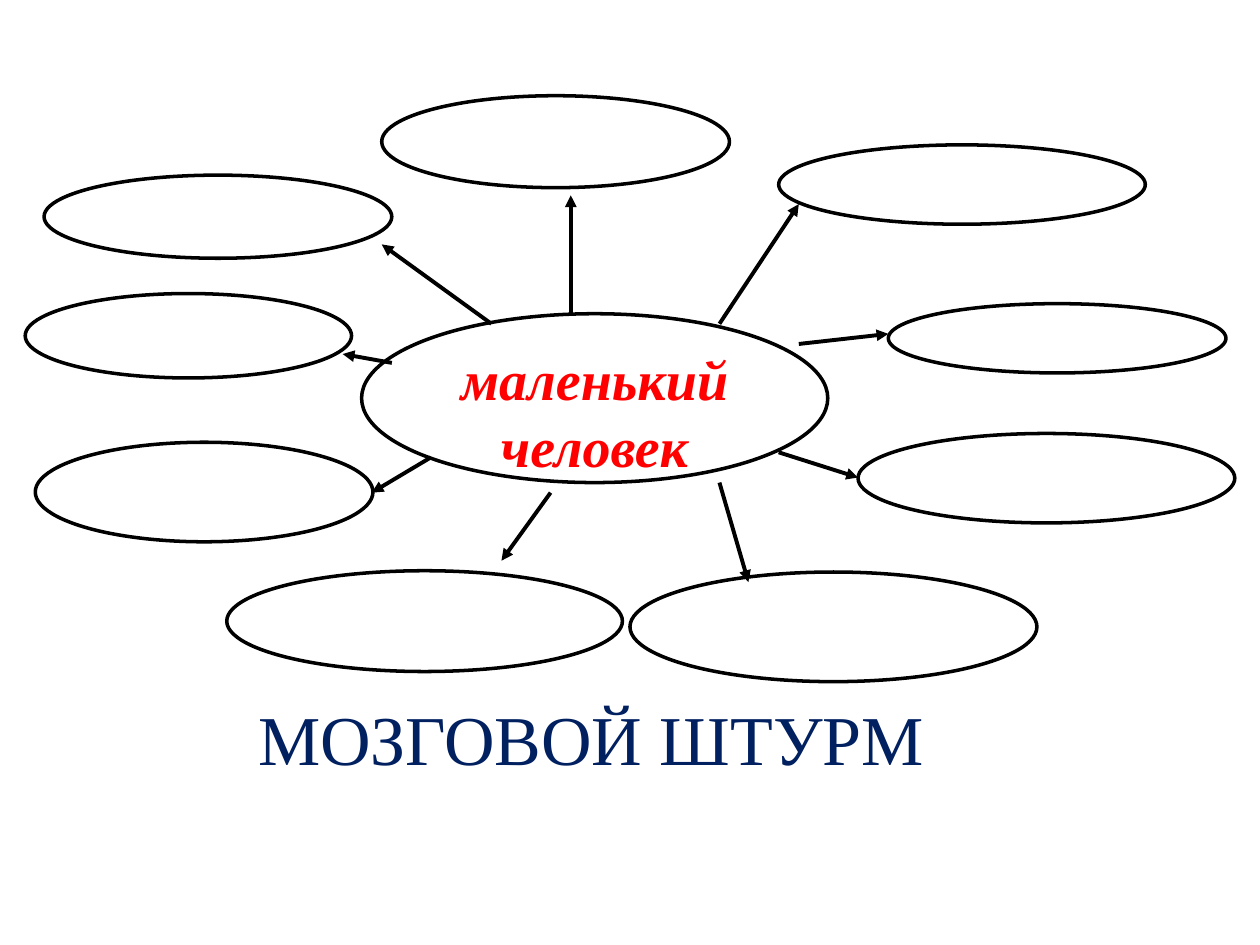
from dataclasses import dataclass

from lxml.etree import SubElement
from pptx import Presentation
from pptx.dml.color import RGBColor
from pptx.enum.shapes import MSO_CONNECTOR as Link, MSO_SHAPE as Shape
from pptx.enum.text import MSO_ANCHOR as Anchor, MSO_AUTO_SIZE as AutoSize, PP_ALIGN as Align
from pptx.oxml.ns import qn
from pptx.util import Inches, Pt


@dataclass(frozen=True)
class Theme:
    font: str = "Times New Roman"
    paper: RGBColor = RGBColor(0xFF, 0xFF, 0xFF)
    ink: RGBColor = RGBColor(0, 0, 0)
    topic: RGBColor = RGBColor(0xFF, 0, 0)
    heading: RGBColor = RGBColor(0, 0x20, 0x60)
    topic_size: Pt = Pt(32)
    heading_size: Pt = Pt(40)
    outline: Pt = Pt(2)
    arrow: Pt = Pt(2.25)


@dataclass(frozen=True)
class Bubble:
    left: float
    top: float
    width: float
    height: float


@dataclass(frozen=True)
class Arrow:
    start: tuple[float, float]
    end: tuple[float, float]


THEME = Theme()
TOPIC = Bubble(2.87, 2.49, 3.7, 1.34)
IDEAS = [
    Bubble(0.35, 1.39, 2.76, 0.66),
    Bubble(0.2, 2.33, 2.59, 0.67),
    Bubble(0.28, 3.51, 2.68, 0.79),
    Bubble(3.03, 0.76, 2.76, 0.73),
    Bubble(1.8, 4.53, 3.14, 0.8),
    Bubble(6.18, 1.15, 2.91, 0.63),
    Bubble(7.05, 2.41, 2.68, 0.55),
    Bubble(6.81, 3.44, 2.99, 0.71),
    Bubble(5, 4.54, 3.23, 0.87),
]
ARROWS = [
    Arrow((4.53, 2.49), (4.53, 1.55)),
    Arrow((6.34, 2.73), (7.05, 2.65)),
    Arrow((5.71, 2.57), (6.34, 1.62)),
    Arrow((6.18, 3.59), (6.81, 3.79)),
    Arrow((5.71, 3.83), (5.94, 4.62)),
    Arrow((4.37, 3.91), (3.98, 4.45)),
    Arrow((3.9, 2.57), (3.03, 1.94)),
    Arrow((3.42, 3.63), (2.95, 3.91)),
    Arrow((3.11, 2.88), (2.72, 2.81)),
]
TOPIC_FORMAT = {"name": THEME.font, "size": THEME.topic_size, "bold": True, "italic": True}
HEADING_FORMAT = {"name": THEME.font, "size": THEME.heading_size}


def draw_bubble(shapes, bubble: Bubble):
    ellipse = shapes.add_shape(
        Shape.OVAL, Inches(bubble.left), Inches(bubble.top),
        Inches(bubble.width), Inches(bubble.height),
    )
    ellipse.shadow.inherit = False
    ellipse.fill.solid()
    ellipse.fill.fore_color.rgb = THEME.paper
    ellipse.line.color.rgb = THEME.ink
    ellipse.line.width = THEME.outline
    return ellipse


def draw_arrow(shapes, arrow: Arrow) -> None:
    ends = [Inches(value) for value in (*arrow.start, *arrow.end)]
    connector = shapes.add_connector(Link.STRAIGHT, *ends)
    connector.line.color.rgb = THEME.ink
    connector.line.width = THEME.arrow
    SubElement(connector.line._get_or_add_ln(), qn("a:tailEnd"), type="triangle")
    SubElement(connector._element.spPr, qn("a:effectLst"))


def write(frame, text: str, font_format: dict, color: RGBColor, align: Align) -> None:
    paragraph = frame.paragraphs[0]
    paragraph.alignment = align
    run = paragraph.add_run()
    run.text = text
    for attribute, value in font_format.items():
        setattr(run.font, attribute, value)
    run.font.color.rgb = color


def main() -> None:
    deck = Presentation()
    deck.slide_width, deck.slide_height = Inches(10), Inches(7.5)
    shapes = deck.slides.add_slide(deck.slide_layouts[6]).shapes

    topic = draw_bubble(shapes, TOPIC).text_frame
    topic.vertical_anchor = Anchor.TOP
    write(topic, "маленький человек", TOPIC_FORMAT, THEME.topic, Align.CENTER)

    for idea in IDEAS:
        draw_bubble(shapes, idea)
    for arrow in ARROWS:
        draw_arrow(shapes, arrow)

    heading = shapes.add_textbox(Inches(1.95), Inches(5.47), Inches(5.54), Inches(0.77)).text_frame
    heading.word_wrap = False
    heading.auto_size = AutoSize.SHAPE_TO_FIT_TEXT
    write(heading, "МОЗГОВОЙ ШТУРМ", HEADING_FORMAT, THEME.heading, Align.LEFT)

    deck.save("out.pptx")


if __name__ == "__main__":
    main()
